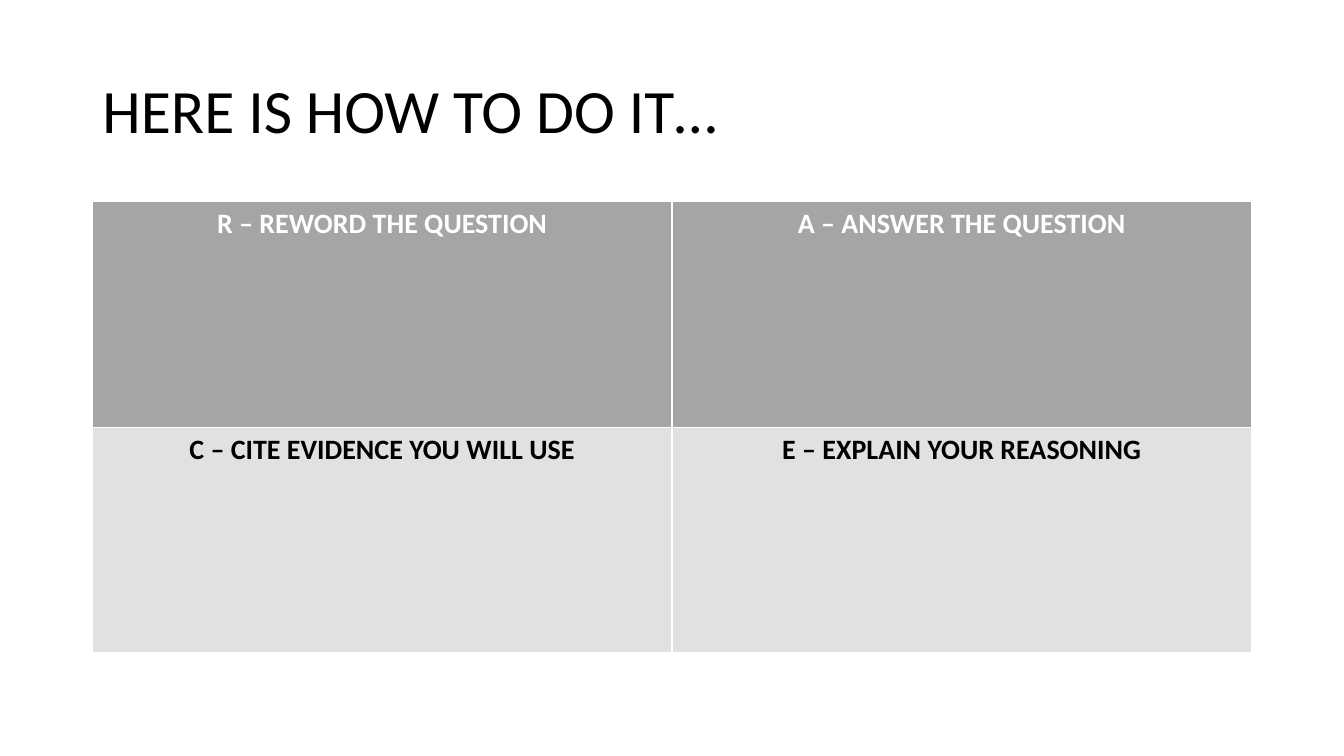
from dataclasses import dataclass

from pptx import Presentation
from pptx.dml.color import RGBColor
from pptx.enum.text import MSO_ANCHOR, PP_ALIGN
from pptx.slide import Slide
from pptx.text.text import TextFrame
from pptx.util import Pt

COLOURS = {"black": "000000", "white": "FFFFFF", "header": "A5A5A5", "body": "E1E1E1"}
LEFT, WIDTH = 66, 828
TABLE_TOP, ROW_HEIGHT = 144, 161.25


@dataclass
class RaceRow:
    steps: tuple[str, ...]
    fill: str
    ink: str


ROWS = [
    RaceRow(("R – REWORD THE QUESTION", "A – ANSWER THE QUESTION"), "header", "white"),
    RaceRow(("C – CITE EVIDENCE YOU WILL USE", "E – EXPLAIN YOUR REASONING"), "body", "black"),
]


def colour(name: str) -> RGBColor:
    """Look up a named colour."""
    return RGBColor.from_string(COLOURS[name])


def set_all(target: object, values: dict) -> None:
    """Set every attribute named in values."""
    for name, value in values.items():
        setattr(target, name, value)


def write(frame: TextFrame, text: str, ink: str, font: dict, para_format: dict) -> None:
    """Write one formatted paragraph."""
    para = frame.paragraphs[0]
    set_all(para, para_format)
    span = para.add_run()
    span.text = text
    set_all(span.font, {"name": "Calibri", **font})
    span.font.color.rgb = colour(ink)


def add_title(page: Slide, text: str) -> None:
    """Place and fill the title placeholder."""
    box = page.shapes.title
    set_all(box, {"left": Pt(LEFT), "top": Pt(28.75), "width": Pt(WIDTH), "height": Pt(104.4)})
    box.text_frame.vertical_anchor = MSO_ANCHOR.MIDDLE
    write(box.text_frame, text, "black", {"size": Pt(44)},
          {"alignment": PP_ALIGN.LEFT, "line_spacing": 0.9})


def add_race_table(page: Slide, rows: list[RaceRow]) -> None:
    """Draw the table of steps."""
    table = page.shapes.add_table(
        len(rows), len(rows[0].steps), Pt(LEFT), Pt(TABLE_TOP),
        Pt(WIDTH), Pt(ROW_HEIGHT * len(rows)),
    ).table
    for row_index, row in enumerate(rows):
        for column_index, step in enumerate(row.steps):
            cell = table.cell(row_index, column_index)
            cell.fill.solid()
            cell.fill.fore_color.rgb = colour(row.fill)
            write(cell.text_frame, step, row.ink, {"size": Pt(20), "bold": True},
                  {"alignment": PP_ALIGN.CENTER})


def main() -> None:
    """Build and save the deck."""
    deck = Presentation()
    set_all(deck, {"slide_width": Pt(960), "slide_height": Pt(540)})
    page = deck.slides.add_slide(deck.slide_layouts.get_by_name("Title Only"))
    add_title(page, "HERE IS HOW TO DO IT…")
    add_race_table(page, ROWS)
    deck.save("out.pptx")


if __name__ == "__main__":
    main()
